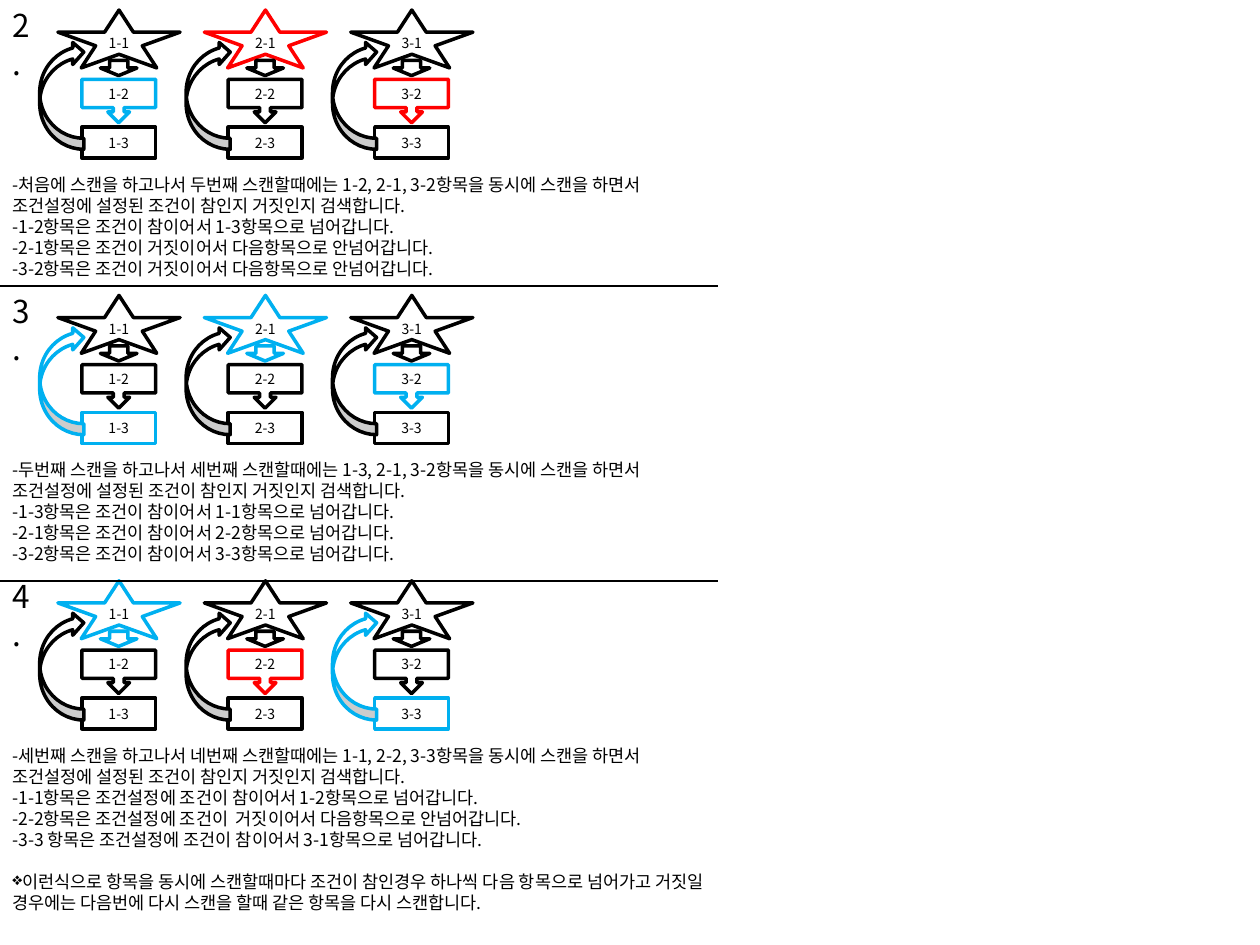
from pptx import Presentation
from pptx.dml.color import RGBColor as RGB
from pptx.enum.shapes import MSO_CONNECTOR as LINK, MSO_SHAPE as SHAPE
from pptx.enum.text import MSO_ANCHOR as ANCHOR, PP_ALIGN as ALIGN
from pptx.oxml.ns import qn
from pptx.util import Inches, Pt
from lxml import etree

FONT = "Noto Sans CJK KR"
HUES = {"ink": "000000", "paper": "FFFFFF", "true": "00B0F0", "false": "FF0000"}

# Grid: 100 columns by 75 rows of square cells
CELL = Inches(10) // 100
WIDE = 57      # columns used by the content
BAND = 22.65   # rows from one scan to the next
TRACK = 11.62  # columns from one track to the next


def grid(*vals):
    return [round(v * CELL) for v in vals]


def hue(name):
    return RGB.from_string(HUES[name])


def add_run(para, text, size):
    run = para.add_run()
    run.text = text
    font = run.font
    font.size, font.name = Pt(size), FONT
    font.color.rgb = hue("ink")
    props = run._r.get_or_add_rPr()
    etree.SubElement(props, qn("a:ea")).set("typeface", FONT)


def add_part(group, kind, box, edge, label=None, turn=0):
    part = group.shapes.add_shape(kind, *grid(*box))
    part.shadow.inherit = False
    part.rotation = turn
    part.fill.solid()
    part.fill.fore_color.rgb = hue("paper")
    part.line.color.rgb = hue(edge)
    part.line.width = Pt(2)
    if label:
        frame = part.text_frame
        frame.margin_left = frame.margin_right = 0
        frame.margin_top = frame.margin_bottom = 0
        frame.vertical_anchor = ANCHOR.MIDDLE
        para = frame.paragraphs[0]
        para.alignment = ALIGN.CENTER
        add_run(para, label, 8)


def add_track(group, x, y, num, step, state):
    """One loop of three items; the scanned step takes the state's colour."""
    edge = {n: state if n == step else "ink" for n in (1, 2, 3)}
    # An arrow lights up only when its item's condition holds
    flow = {n: "true" if edge[n] == "true" else "ink" for n in (1, 3)}
    add_part(group, SHAPE.STAR_5_POINT, (x + 4.6, y + 0.8, 9.7, 4.6),
             edge[1], f"{num}-1")
    add_part(group, SHAPE.RECTANGLE, (x + 6.5, y + 10.1, 5.85, 2.45),
             edge[3], f"{num}-3")
    add_part(group, SHAPE.DOWN_ARROW_CALLOUT, (x + 6.5, y + 6.3, 5.85, 3.45),
             edge[2], f"{num}-2")
    add_part(group, SHAPE.DOWN_ARROW, (x + 7.97, y + 4.8, 2.9, 1.2), flow[1])
    add_part(group, SHAPE.CURVED_DOWN_ARROW, (x + 0.6, y + 5.8, 8.6, 3.5),
             flow[3], turn=270)


def add_text(slide, box, lines, size):
    frame = slide.shapes.add_textbox(*grid(*box)).text_frame
    frame.word_wrap = True
    for i, line in enumerate(lines):
        para = frame.paragraphs[0] if i == 0 else frame.add_paragraph()
        add_run(para, line, size)
    return frame


def add_note(frame, text):
    """Closing remark with a diamond bullet, one line below the rest."""
    para = frame.add_paragraph()
    para.space_before = Pt(12)
    add_run(para, text, 10)
    props = para._p.get_or_add_pPr()
    props.set("marL", "0")
    props.set("indent", "0")
    etree.SubElement(props, qn("a:buChar")).set("char", "❖")


def add_rule(slide, y):
    left, right, top = grid(0, WIDE, y)
    rule = slide.shapes.add_connector(LINK.STRAIGHT, left, top, right, top)
    rule.line.color.rgb = hue("ink")
    rule.line.width = Pt(1.5)
    etree.SubElement(rule._element.spPr, qn("a:effectLst"))


def add_scan(slide, y, num, steps, lines, high):
    """One scan: its diagram, its explanation and its number."""
    group = slide.shapes.add_group_shape()
    for i, (step, state) in enumerate(steps):
        add_track(group, i * TRACK, y, i + 1, step, state)
    frame = add_text(slide, (0, y + 13.3, WIDE, high), lines, 10)
    add_text(slide, (0, y, 4, 4), [f"{num}."], 18)
    return frame


def intro(last, now, items):
    return (f"-{last}번째 스캔을 하고나서 {now}번째 스캔할때에는 {items}항목을 동시에 "
            "스캔을 하면서 조건설정에 설정된 조건이 참인지 거짓인지 검색합니다.")


# Per scan: (step, state) of each track, then the text and its height
SCANS = [
    ([(2, "true"), (1, "false"), (2, "false")],
     ["-처음에 스캔을 하고나서 두번째 스캔할때에는 1-2, 2-1, 3-2항목을 동시에 "
      "스캔을 하면서 조건설정에 설정된 조건이 참인지 거짓인지 검색합니다.",
      "-1-2항목은 조건이 참이어서 1-3항목으로 넘어갑니다.",
      "-2-1항목은 조건이 거짓이어서 다음항목으로 안넘어갑니다.",
      "-3-2항목은 조건이 거짓이어서 다음항목으로 안넘어갑니다."], 9.4),
    ([(3, "true"), (1, "true"), (2, "true")],
     [intro("두", "세", "1-3, 2-1, 3-2"),
      "-1-3항목은 조건이 참이어서 1-1항목으로 넘어갑니다.",
      "-2-1항목은 조건이 참이어서 2-2항목으로 넘어갑니다.",
      "-3-2항목은 조건이 참이어서 3-3항목으로 넘어갑니다."], 9.4),
    ([(1, "true"), (2, "false"), (3, "true")],
     [intro("세", "네", "1-1, 2-2, 3-3"),
      "-1-1항목은 조건설정에 조건이 참이어서 1-2항목으로 넘어갑니다.",
      "-2-2항목은 조건설정에 조건이  거짓이어서 다음항목으로 안넘어갑니다.",
      "-3-3 항목은 조건설정에 조건이 참이어서 3-1항목으로 넘어갑니다."], 14.5),
]
NOTE = ("이런식으로 항목을 동시에 스캔할때마다 조건이 참인경우 하나씩 다음 항목으로 넘어가고 "
        "거짓일 경우에는 다음번에 다시 스캔을 할때 같은 항목을 다시 스캔합니다.")


def main():
    deck = Presentation()
    deck.slide_width, deck.slide_height = grid(100, 75)
    slide = deck.slides.add_slide(deck.slide_layouts[6])
    for i, (steps, lines, high) in enumerate(SCANS):
        frame = add_scan(slide, i * BAND, i + 2, steps, lines, high)
    add_note(frame, NOTE)
    # Rules between the scans
    for y in (22.7, 46.1):
        add_rule(slide, y)
    deck.save("out.pptx")


if __name__ == "__main__":
    main()
